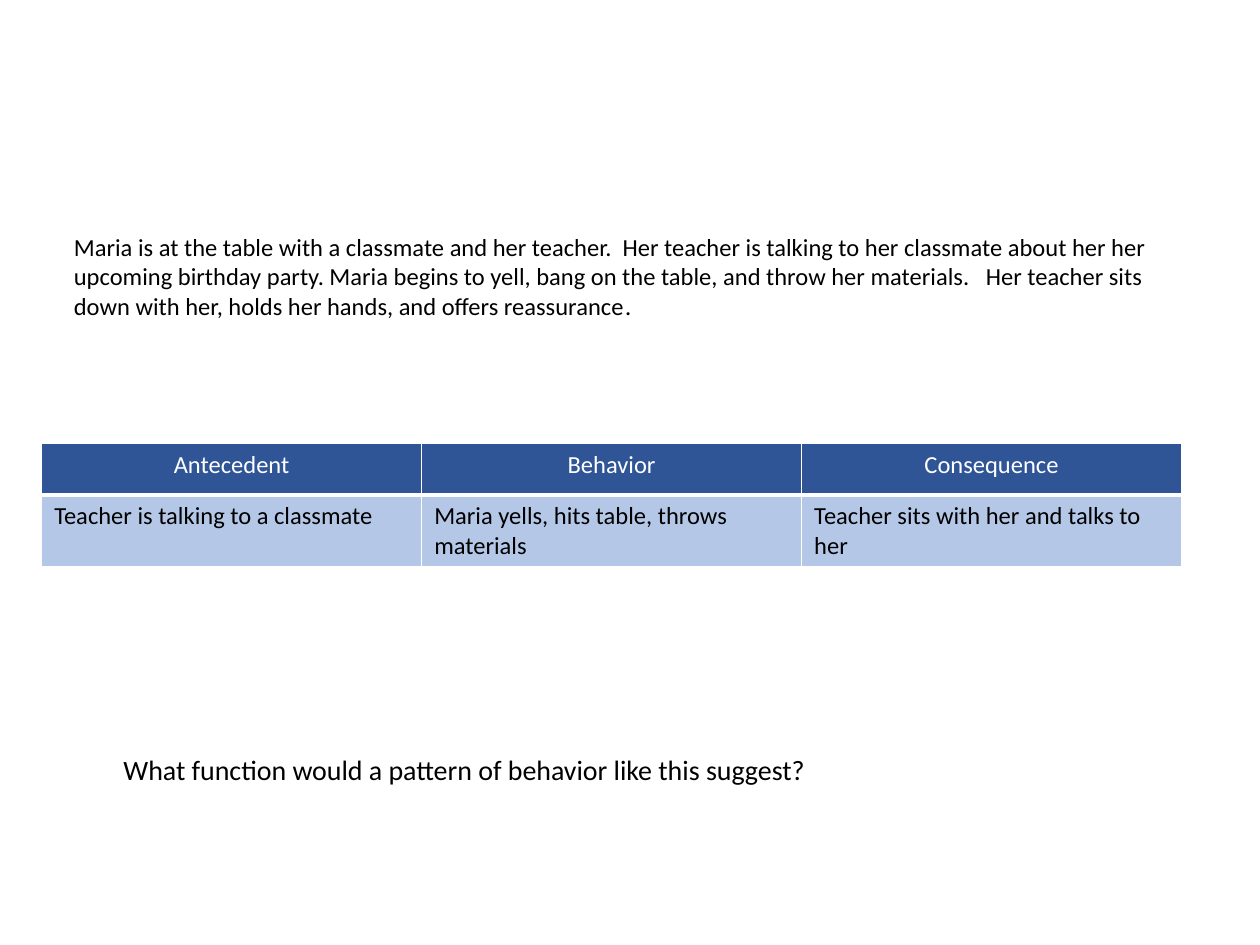
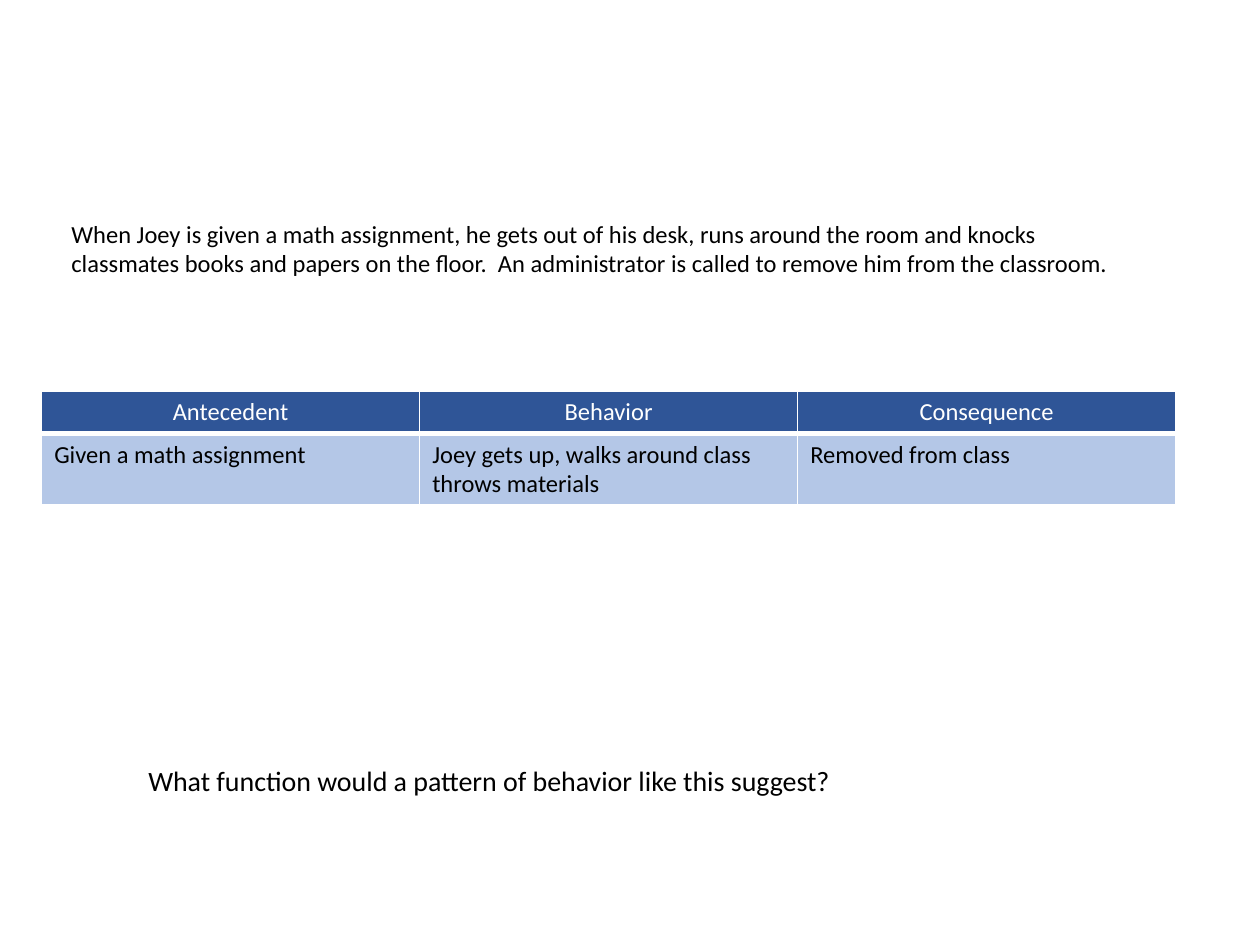
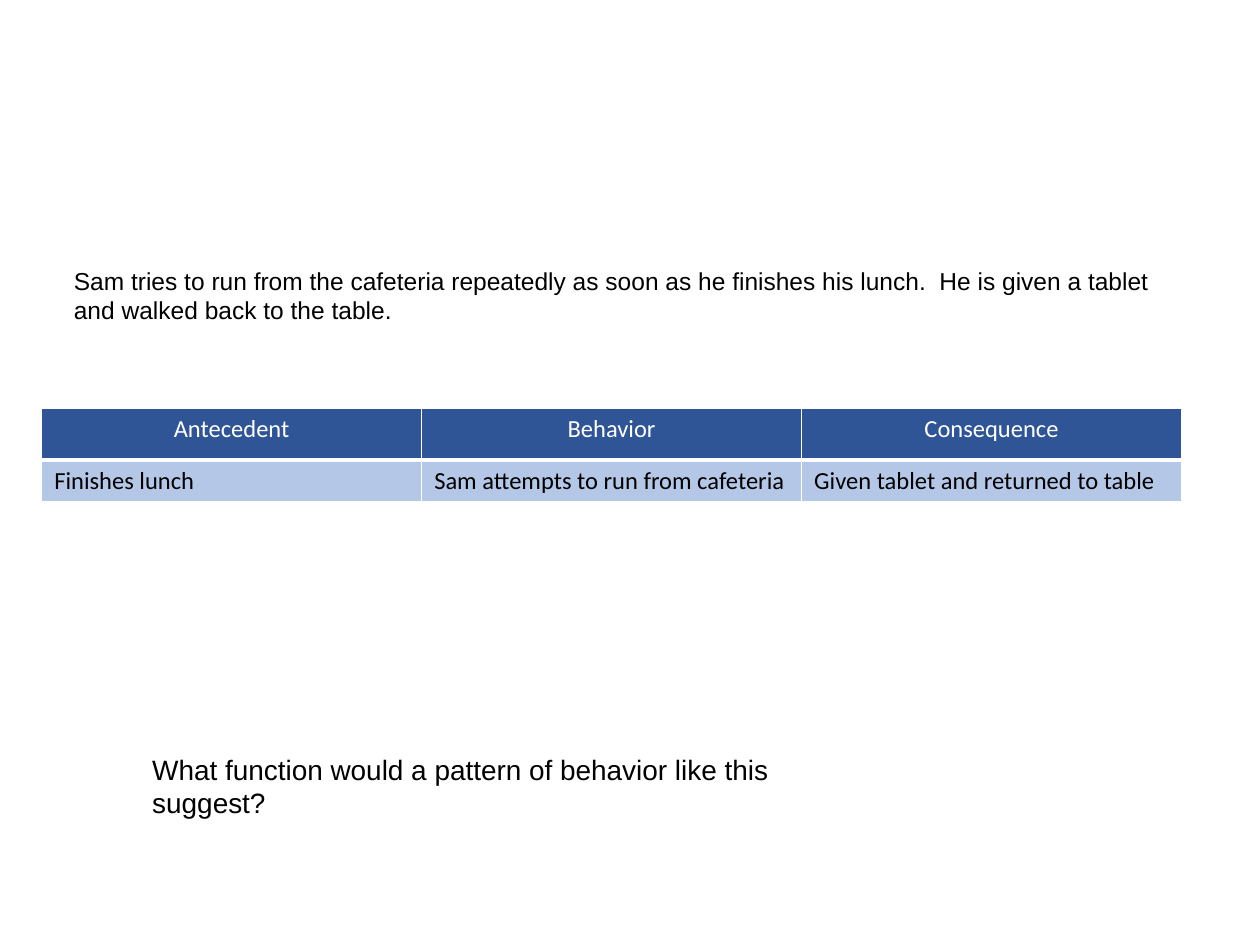
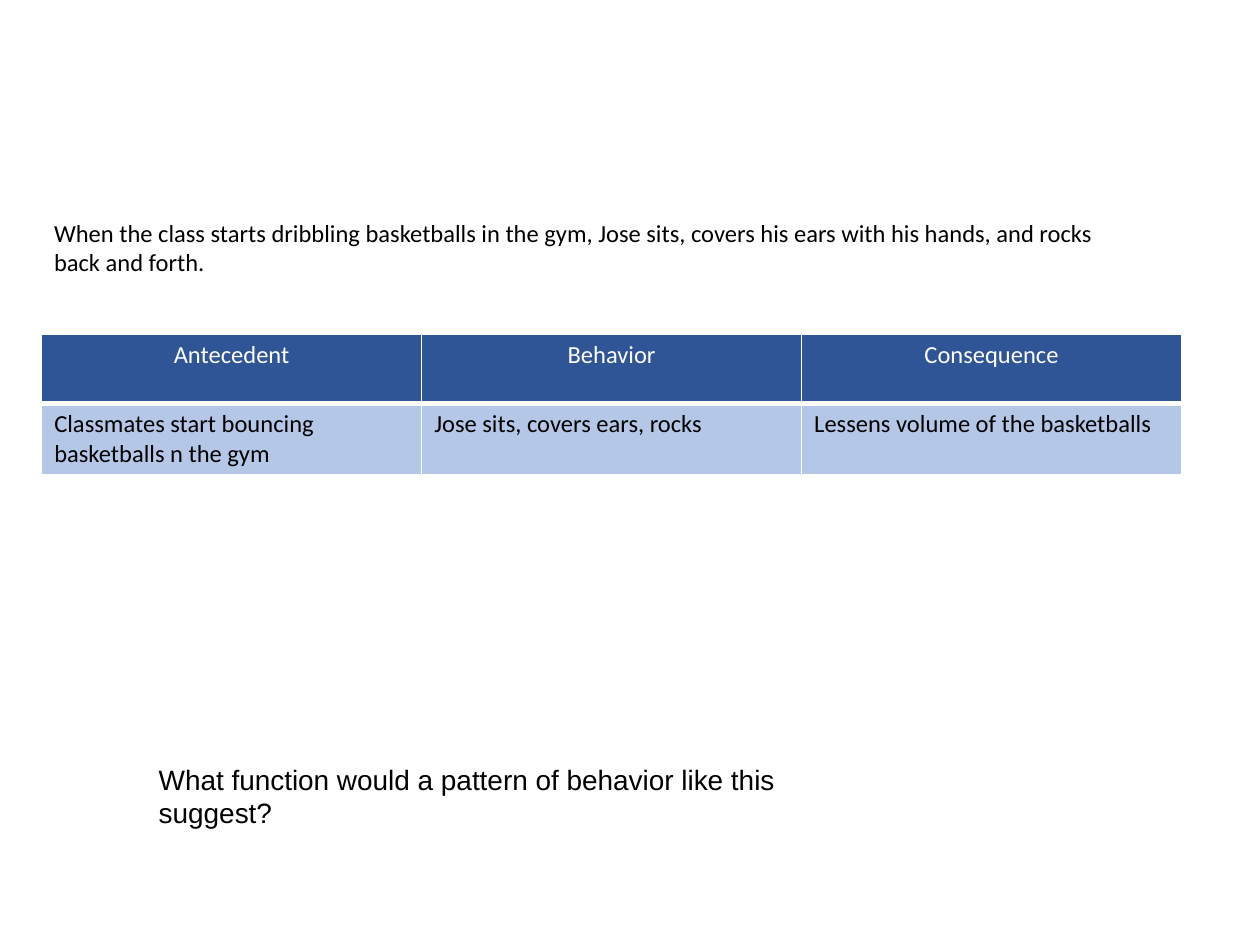
from lxml.etree import SubElement
from pptx import Presentation
from pptx.dml.color import RGBColor
from pptx.enum.text import PP_ALIGN
from pptx.oxml.ns import qn
from pptx.util import Cm, Pt

WHITE, BLACK, NAVY, PALE = "FFFFFF", "000000", "2F5597", "B4C7E7"
HEADINGS = ["Antecedent", "Behavior", "Consequence"]
QUESTION = "What function would a pattern of behavior like this suggest?"
STORY_WIDTH, QUESTION_SIZE = 22.2, (14.43, 0.94)
TABLE_LEFT, BODY_HEIGHT = 0.84, 0.84
HEADER_BORDERS = {"lnL": 1, "lnR": 1, "lnT": 1, "lnB": 3}
BODY_BORDERS = {"lnL": 1, "lnR": 1, "lnT": 1, "lnB": 1}

CASES = [
    {
        "story": [
            ("Maria is at the table with a classmate and her teacher.  Her teacher is talking to her "
             "classmate about her her upcoming birthday party. Maria begins to yell, bang on the table, "
             "and throw her materials.   Her teacher sits down with her, holds her hands, and offers "
             "reassurance", "Calibri"),
            (".", "League Spartan"),
        ],
        "story_box": (1.24, 4.55, 3.33),
        "answers": ["Teacher is talking to a classmate",
                    "Maria yells, hits table, throws materials",
                    "Teacher sits with her and talks to her"],
        "table_top": 8.94, "column": 7.66, "header": 1.04,
        "question_at": (2.24, 15.04), "question_font": "Calibri",
    },
    {
        "story": [
            ("When Joey is given a math assignment, he gets out of his desk, runs around the room and "
             "knocks classmates books and papers on the floor.  An administrator is called to remove "
             "him from the classroom.", "Calibri"),
        ],
        "story_box": (1.19, 4.29, 2.57),
        "answers": ["Given a math assignment",
                    "Joey gets up, walks around class throws materials",
                    "Removed from class"],
        "table_top": 7.88, "column": 7.62, "header": 0.86,
        "question_at": (2.74, 15.27), "question_font": "Calibri",
    },
    {
        "story": [
            ("Sam tries to run from the cafeteria repeatedly as soon as he finishes his lunch.  "
             "He is given a tablet and walked back to the table.", "Arial"),
        ],
        "story_box": (1.24, 5.23, 1.8),
        "answers": ["Finishes lunch",
                    "Sam attempts to run from cafeteria",
                    "Given tablet and returned to table"],
        "table_top": 8.23, "column": 7.66, "header": 1.04,
        "question_at": (2.82, 15.04), "question_font": "Arial",
    },
    {
        "story": [
            ("When the class starts dribbling basketballs in the gym, Jose sits, covers his ears with "
             "his hands, and rocks back and forth.", "Calibri"),
        ],
        "story_box": (0.84, 4.27, 1.8),
        "answers": ["Classmates start bouncing basketballs n the gym",
                    "Jose sits, covers ears, rocks",
                    "Lessens volume of the basketballs"],
        "table_top": 6.73, "column": 7.66, "header": 1.4,
        "question_at": (2.95, 15.24), "question_font": "Arial",
    },
]


def rgb(value):
    return RGBColor.from_string(value)


def write(frame, runs, size=14, color=BLACK, align=PP_ALIGN.LEFT):
    frame.word_wrap = True
    paragraph = frame.paragraphs[0]
    paragraph.alignment = align
    for text, font in runs:
        run = paragraph.add_run()
        run.text = text
        run.font.name = font
        run.font.size = Pt(size)
        run.font.color.rgb = rgb(color)


def add_text(slide, runs, left, top, width, height, **style):
    box = slide.shapes.add_textbox(Cm(left), Cm(top), Cm(width), Cm(height))
    write(box.text_frame, runs, **style)


def style_cell(cell, fill, borders):
    properties = cell._tc.get_or_add_tcPr()
    for side, points in borders.items():
        line = SubElement(properties, qn(f"a:{side}"), w=str(Pt(points)))
        SubElement(SubElement(line, qn("a:solidFill")), qn("a:srgbClr"), val=WHITE)
    cell.fill.solid()
    cell.fill.fore_color.rgb = rgb(fill)


def add_abc_table(slide, case):
    heights = [case["header"], BODY_HEIGHT]
    table = slide.shapes.add_table(
        2, len(HEADINGS), Cm(TABLE_LEFT), Cm(case["table_top"]),
        Cm(case["column"] * len(HEADINGS)), Cm(sum(heights))).table
    for column in table.columns:
        column.width = Cm(case["column"])
    for row, height in zip(table.rows, heights):
        row.height = Cm(height)
    for index, (heading, answer) in enumerate(zip(HEADINGS, case["answers"])):
        header, body = table.cell(0, index), table.cell(1, index)
        style_cell(header, NAVY, HEADER_BORDERS)
        write(header.text_frame, [(heading, "Calibri")], color=WHITE, align=PP_ALIGN.CENTER)
        style_cell(body, PALE, BODY_BORDERS)
        write(body.text_frame, [(answer, "Calibri")])


def main():
    deck = Presentation()
    deck.slide_width, deck.slide_height = Cm(25.4), Cm(19.05)
    for case in CASES:
        slide = deck.slides.add_slide(deck.slide_layouts[6])
        left, top, height = case["story_box"]
        add_text(slide, case["story"], left, top, STORY_WIDTH, height)
        add_abc_table(slide, case)
        add_text(slide, [(QUESTION, case["question_font"])],
                 *case["question_at"], *QUESTION_SIZE, size=16)
    deck.save("out.pptx")


if __name__ == "__main__":
    main()
